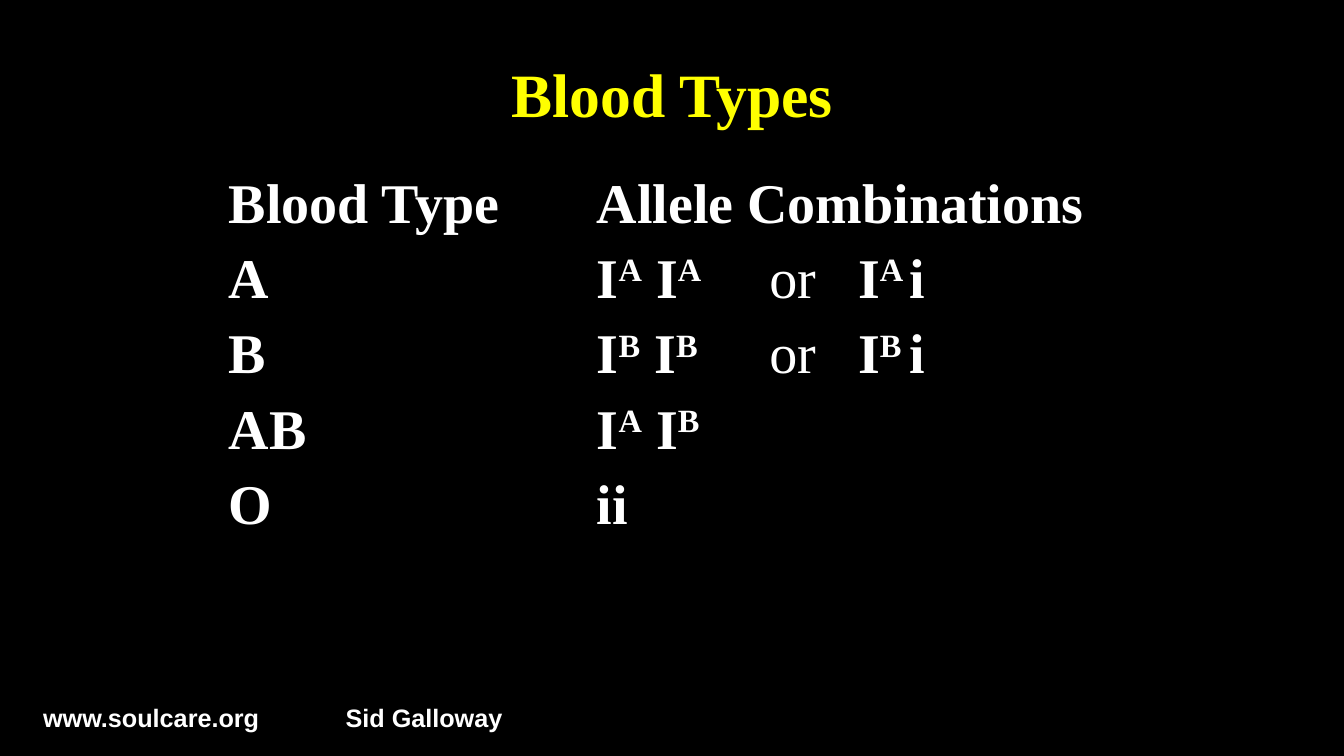
from lxml.etree import SubElement
from pptx import Presentation
from pptx.dml.color import RGBColor
from pptx.enum.text import MSO_ANCHOR, PP_ALIGN
from pptx.oxml.ns import qn
from pptx.util import Inches, Pt


def style(font, size, name, color):
    font.size = Pt(size)
    font.name = name
    font.bold = True
    font.color.rgb = RGBColor.from_string(color)


def tabs(para, *stops):
    """Set left tab stops, given in inches."""
    group = SubElement(para._p.get_or_add_pPr(), qn("a:tabLst"))
    for stop in stops:
        SubElement(group, qn("a:tab"), pos=str(Inches(stop)), algn="l")


SERIF = "Times New Roman"
WHITE = "FFFFFF"
BLACK = "000000"

deck = Presentation()
deck.slide_width = Inches(13.33)
deck.slide_height = Inches(7.5)
slide = deck.slides.add_slide(deck.slide_layouts[5])
back = slide.background.fill
back.solid()
back.fore_color.rgb = RGBColor.from_string(BLACK)

# Title
title = slide.shapes.title
title.left, title.top = Inches(0.67), Inches(0.3)
title.width, title.height = Inches(12), Inches(1.25)
title.text_frame.text = "Blood Types"
title.text_frame.vertical_anchor = MSO_ANCHOR.MIDDLE
head = title.text_frame.paragraphs[0]
head.alignment = PP_ALIGN.CENTER
style(head.font, 44, SERIF, "FFFF00")

# Footer
foot = slide.shapes.add_textbox(Inches(0.33), Inches(6.92), Inches(8.44), Inches(0.43))
foot.text_frame.word_wrap = True
line = foot.text_frame.paragraphs[0]
line.text = "www.soulcare.org\tSid Galloway"
tabs(line, 3)
style(line.font, 18, "Arial", WHITE)

# Blood type table: "|" parts the runs, "^" marks a superscript
rows = [
    ("Blood Type", "Allele Combinations"),
    ("A", "I|^A| I|^A|\tor\t|I|^A |i"),
    ("B", "I|^B| I|^B|\tor\t|I|^B |i"),
    ("AB", "I|^A| I|^B"),
    ("O", "ii"),
]
frame = slide.shapes.add_table(len(rows), 2, Inches(2.17), Inches(1.67),
                               Inches(8.92), Inches(3.5))
table = frame.table
table.columns[0].width = Inches(3.65)
table.columns[1].width = Inches(5.27)

for r, row in enumerate(rows):
    for c, text in enumerate(row):
        cell = table.cell(r, c)
        cell.margin_top = Inches(0.05)
        cell.margin_bottom = Inches(0.03)
        props = cell._tc.get_or_add_tcPr()
        for side in ("lnL", "lnR", "lnT", "lnB"):
            edge = SubElement(props, qn(f"a:{side}"), w=str(Pt(1)))
            SubElement(SubElement(edge, qn("a:solidFill")), qn("a:srgbClr"), val=BLACK)
        cell.fill.background()

        para = cell.text_frame.paragraphs[0]
        if "\t" in text:
            tabs(para, 1.71, 2.59)
        style(para.font, 40, SERIF, WHITE)
        for part in text.split("|"):
            run = para.add_run()
            run.text = part.lstrip("^")
            if part.startswith("^"):
                run.font._element.set("baseline", "30000")
            if "or" in part:
                run.font.bold = False

deck.save("out.pptx")
